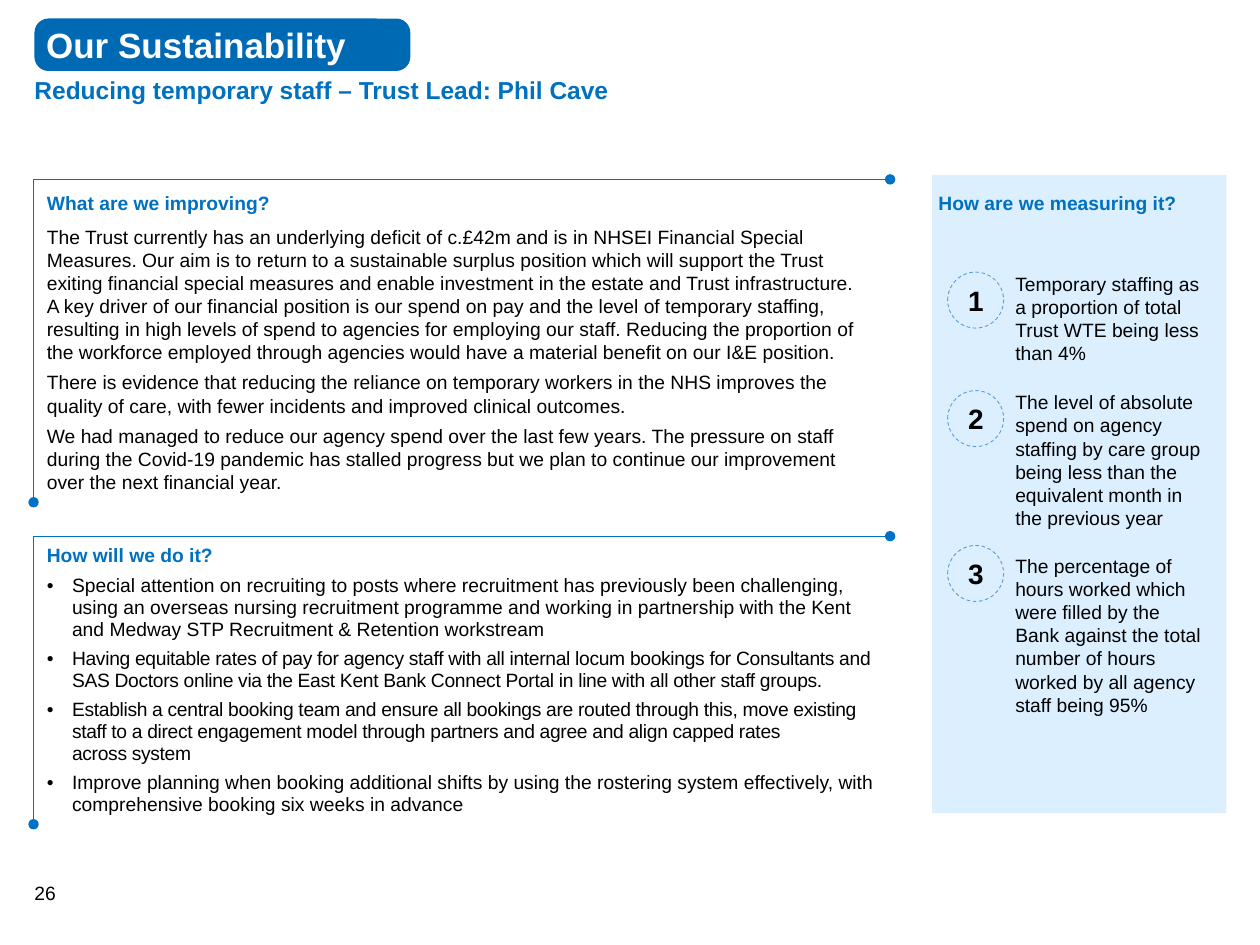
from dataclasses import dataclass

from lxml import etree
from pptx import Presentation
from pptx.dml.color import RGBColor
from pptx.enum import dml, shapes, text
from pptx.oxml.ns import qn
from pptx.util import Pt


@dataclass(frozen=True)
class Theme:
    font: str = "Arial"
    blue: str = "0070C0"
    band: str = "0069B4"
    rule: str = "0072C6"
    pale: str = "DBEFFF"
    ring: str = "5B9BD5"
    ink: str = "000000"
    white: str = "FFFFFF"
    body: float = 11
    sub: float = 14
    num: float = 16
    head: float = 20


T = Theme()


@dataclass(frozen=True)
class Box:
    x: float
    y: float
    w: float
    h: float

    def pts(self) -> tuple:
        return Pt(self.x), Pt(self.y), Pt(self.w), Pt(self.h)


@dataclass(frozen=True)
class Para:
    words: str
    size: float = T.body
    color: str = T.ink
    bold: bool = False
    after: float = 0
    bullet: bool = False
    track: float = 0
    align: text.PP_ALIGN = text.PP_ALIGN.LEFT


@dataclass(frozen=True)
class Goal:
    top: float
    words: str
    high: float
    drop: float = 0


def rgb(code: str) -> RGBColor:
    return RGBColor.from_string(code)


def write(shape, paras: list[Para], inset: tuple = (0, 0), mid: bool = False, grow: bool = True) -> None:
    frame = shape.text_frame
    frame.word_wrap = True
    frame.margin_left = frame.margin_right = Pt(inset[0])
    frame.margin_top = frame.margin_bottom = Pt(inset[1])
    frame.vertical_anchor = text.MSO_ANCHOR.MIDDLE if mid else text.MSO_ANCHOR.TOP
    frame.auto_size = text.MSO_AUTO_SIZE.SHAPE_TO_FIT_TEXT if grow else text.MSO_AUTO_SIZE.NONE
    for i, item in enumerate(paras):
        para = frame.paragraphs[0] if i == 0 else frame.add_paragraph()
        para.text = item.words
        para.alignment = item.align
        para.space_after = Pt(item.after)
        if item.bullet:
            para.line_spacing = 0.95
            props = para._p.get_or_add_pPr()
            props.set("marL", str(Pt(14.4)))
            props.set("indent", str(-Pt(14.4)))
            etree.SubElement(props, qn("a:buFont")).set("typeface", T.font)
            etree.SubElement(props, qn("a:buChar")).set("char", "•")
        for run in para.runs:
            font = run.font
            font.name, font.size, font.bold = T.font, Pt(item.size), item.bold
            font.color.rgb = rgb(item.color)
            if item.track:
                run._r.get_or_add_rPr().set("spc", str(round(item.track * 100)))
        # Line breaks take the height of their text
        for gap in para._p.findall(qn("a:br")):
            etree.SubElement(gap, qn("a:rPr")).set("sz", str(round(item.size * 100)))


def label(slide, box: Box, paras: list[Para], **opts) -> None:
    write(slide.shapes.add_textbox(*box.pts()), paras, **opts)


def panel(slide, kind: shapes.MSO_SHAPE, box: Box, fill: str):
    shape = slide.shapes.add_shape(kind, *box.pts())
    shape.shadow.inherit = False
    shape.fill.solid()
    shape.fill.fore_color.rgb = rgb(fill)
    shape.line.fill.background()
    return shape


def bracket(slide, box: Box) -> None:
    path = slide.shapes.build_freeform(Pt(box.x), Pt(box.y + box.h))
    path.add_line_segments(
        [(Pt(box.x), Pt(box.y)), (Pt(box.x + box.w), Pt(box.y))], close=False)
    shape = path.convert_to_shape()
    shape.shadow.inherit = False
    shape.fill.background()
    shape.line.width = Pt(0.5)
    shape.line.color.rgb = rgb(T.rule)
    for end in ("a:headEnd", "a:tailEnd"):
        etree.SubElement(shape.line._get_or_add_ln(), qn(end)).set("type", "oval")


def measure(slide, num: int, goal: Goal) -> None:
    ring = panel(slide, shapes.MSO_SHAPE.OVAL, Box(541.5, goal.top, 32, 32), T.pale)
    ring.line.width = Pt(0.5)
    ring.line.color.rgb = rgb(T.ring)
    ring.line.dash_style = dml.MSO_LINE.DASH
    write(ring, [Para(str(num), T.num, bold=True, align=text.PP_ALIGN.CENTER)],
          inset=(7.2, 3.6), mid=True, grow=False)
    note = panel(slide, shapes.MSO_SHAPE.RECTANGLE,
                 Box(580.2, goal.top + goal.drop, 110.2, goal.high), T.pale)
    write(note, [Para(goal.words, after=6)])


WHAT = [
    Para("What are we improving?", color=T.blue, bold=True, after=6),
    Para("The Trust currently has an underlying deficit of c.£42m and is in NHSEI Financial Special "
         "Measures. Our aim is to return to a sustainable surplus position which will support the Trust "
         "exiting financial special measures and enable investment in the estate and Trust infrastructure.\v"
         "A key driver of our financial position is our spend on pay and the level of temporary staffing, "
         "resulting in high levels of spend to agencies for employing our staff. Reducing the proportion of "
         "the workforce employed through agencies would have a material benefit on our I&E position.", after=4),
    Para("There is evidence that reducing the reliance on temporary workers in the NHS improves the "
         "quality of care, with fewer incidents and improved clinical outcomes.", after=4),
    Para("We had managed to reduce our agency spend over the last few years. The pressure on staff "
         "during the Covid-19 pandemic has stalled progress but we plan to continue our improvement "
         "over the next financial year.", after=4),
]

HOW = [
    Para("How will we do it?", color=T.blue, bold=True, after=5),
    Para("Special attention on recruiting to posts where recruitment has previously been challenging, "
         "using an overseas nursing recruitment programme and working in partnership with the Kent "
         "and Medway STP Recruitment & Retention workstream", after=4, bullet=True),
    Para("Having equitable rates of pay for agency staff with all internal locum bookings for Consultants "
         "and SAS Doctors online via the East Kent Bank Connect Portal in line with all other staff groups.",
         after=4, bullet=True, track=-0.2),
    Para("Establish a central booking team and ensure all bookings are routed through this, move existing "
         "staff to a direct engagement model through partners and agree and align capped rates\v"
         "across system", after=4, bullet=True, track=-0.2),
    Para("Improve planning when booking additional shifts by using the rostering system effectively, with "
         "comprehensive booking six weeks in advance", after=4, bullet=True),
]

GOALS = [
    Goal(155.5, "Temporary staffing as a proportion of total Trust WTE being less than 4%", 53.3),
    Goal(223.2, "The level of absolute spend on agency staffing by care group being less than the "
                "equivalent month in the previous year", 80),
    Goal(311.7, "The percentage of hours worked which were filled by the Bank against the total number "
                "of hours worked by all agency staff being 95%", 93.3, 5),
]


def main() -> None:
    deck = Presentation()
    deck.slide_width, deck.slide_height = Pt(720), Pt(540)
    slide = deck.slides.add_slide(deck.slide_layouts[6])

    # Heading and page number
    tab = panel(slide, shapes.MSO_SHAPE.ROUNDED_RECTANGLE, Box(19.7, 10.6, 214.8, 30), T.band)
    tab.adjustments[0] = 0.27
    write(tab, [Para("Our Sustainability", T.head, T.white, True)],
          inset=(4.3, 4.3), mid=True, grow=False)
    label(slide, Box(19.7, 42.8, 520, 17),
          [Para("Reducing temporary staff – Trust Lead: Phil Cave", T.sub, T.blue, True)], mid=True)
    label(slide, Box(19.7, 503.3, 39.6, 13.7), [Para("26")])

    # Bracketed text on the left
    label(slide, Box(26.8, 109.4, 476, 177.8), WHAT)
    bracket(slide, Box(19.2, 102.5, 489.5, 184.5))
    label(slide, Box(26.8, 310.5, 476, 157), HOW)
    bracket(slide, Box(19.2, 306.4, 489.5, 164.6))

    # Measures on the right
    panel(slide, shapes.MSO_SHAPE.RECTANGLE, Box(532.6, 100, 168.2, 364.7), T.pale)
    for num, goal in enumerate(GOALS, 1):
        measure(slide, num, goal)
    label(slide, Box(529.2, 105.8, 156.2, 20.9),
          [Para("How are we measuring it?", color=T.blue, bold=True)], inset=(7.2, 3.6))

    deck.save("out.pptx")


if __name__ == "__main__":
    main()
